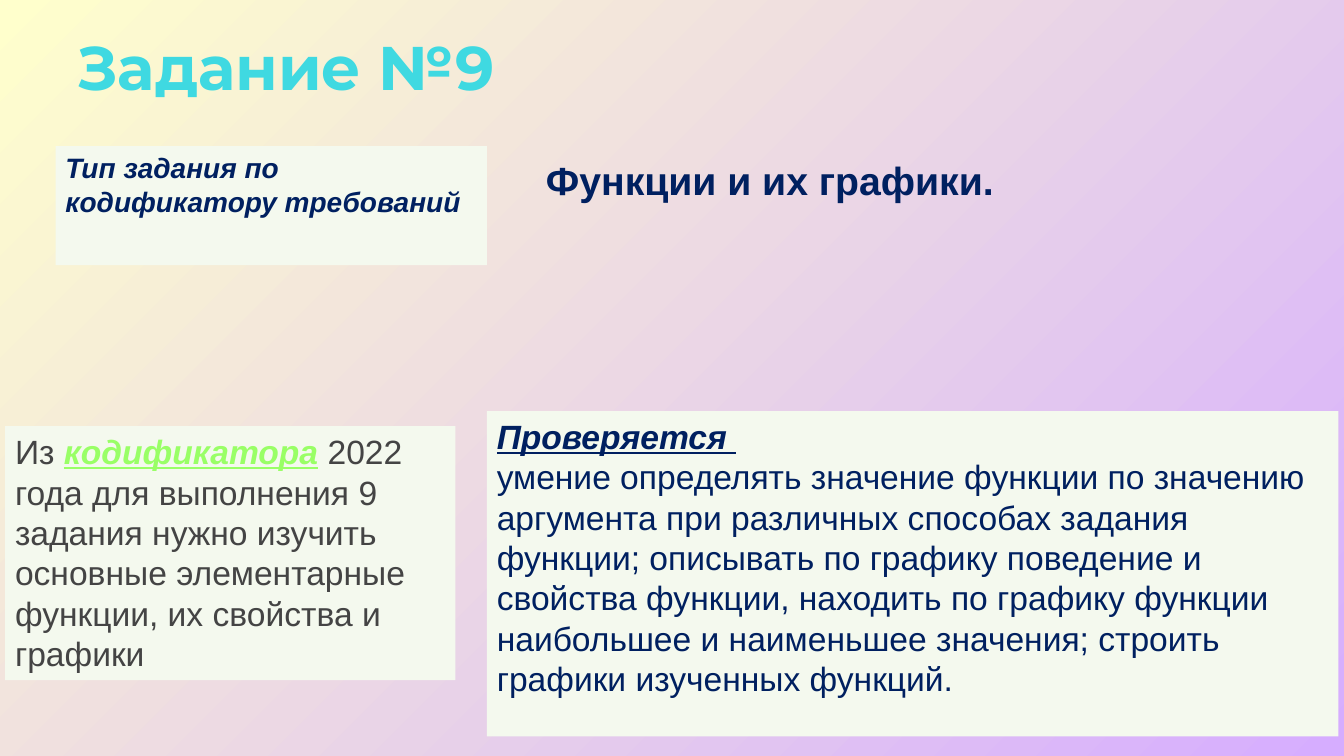
from pptx import Presentation
from pptx.dml.color import RGBColor
from pptx.enum.shapes import MSO_SHAPE
from pptx.enum.text import MSO_ANCHOR, PP_ALIGN
from pptx.util import Cm, Pt

RECTANGLE = MSO_SHAPE.RECTANGLE
TOP, MIDDLE = MSO_ANCHOR.TOP, MSO_ANCHOR.MIDDLE
LEFT = PP_ALIGN.LEFT

CREAM = RGBColor(0xFF, 0xFF, 0xCC)
LILAC = RGBColor(0xD6, 0xAD, 0xFF)
TURQUOISE = RGBColor(0x3F, 0xD9, 0xE1)
PALE_GREEN = RGBColor(0xF4, 0xF9, 0xEE)
LIME = RGBColor(0x99, 0xFF, 0x66)
NAVY = RGBColor(0x00, 0x20, 0x60)
GREY = RGBColor(0x44, 0x44, 0x44)


class TaskSlide:
    BODY_FONT = "Arial"
    TITLE_FONT = "Montserrat"

    def __init__(self, deck):
        self.slide = deck.slides.add_slide(deck.slide_layouts[5])

    def background(self, start, end):
        """Shade the slide diagonally from the top left to the bottom right."""
        fill = self.slide.background.fill
        fill.gradient()
        fill.gradient_angle = 315
        for stop, color, position in zip(fill.gradient_stops, (start, end), (0, 1)):
            stop.color.rgb = color
            stop.position = position

    def add_text(self, frame, paragraphs, size, font=BODY_FONT, anchor=TOP):
        """Fill a frame with paragraphs, each a list of (text, colour, styles)."""
        frame.word_wrap = True
        frame.vertical_anchor = anchor
        for index, runs in enumerate(paragraphs):
            paragraph = frame.add_paragraph() if index else frame.paragraphs[0]
            paragraph.alignment = LEFT
            for text, color, styles in runs:
                run = paragraph.add_run()
                run.text = text
                run.font.name = font
                run.font.size = Pt(size)
                run.font.color.rgb = color
                run.font.bold = "b" in styles
                run.font.italic = "i" in styles
                run.font.underline = "u" in styles

    def title(self, text, left, top, width, height):
        heading = self.slide.shapes.title
        heading.left, heading.top = Cm(left), Cm(top)
        heading.width, heading.height = Cm(width), Cm(height)
        self.add_text(heading.text_frame, [[(text, TURQUOISE, "b")]], 44,
                      self.TITLE_FONT, MIDDLE)

    def panel(self, paragraphs, size, left, top, width, height):
        panel = self.slide.shapes.add_shape(
            RECTANGLE, Cm(left), Cm(top), Cm(width), Cm(height))
        panel.shadow.inherit = False
        panel.fill.solid()
        panel.fill.fore_color.rgb = PALE_GREEN
        panel.line.fill.background()
        self.add_text(panel.text_frame, paragraphs, size)

    def text(self, paragraphs, size, left, top, width, height):
        box = self.slide.shapes.add_textbox(
            Cm(left), Cm(top), Cm(width), Cm(height))
        self.add_text(box.text_frame, paragraphs, size)


def main():
    deck = Presentation()
    deck.slide_width, deck.slide_height = Cm(33.87), Cm(19.05)
    task = TaskSlide(deck)
    task.background(CREAM, LILAC)
    task.title("Задание №9", 1.7, 0.69, 31.06, 1.93)

    skills = [
        [("Проверяется ", NAVY, "biu")],
        [("умение определять значение функции по значению аргумента при "
          "различных способах задания функции; описывать по графику поведение "
          "и свойства функции, находить по графику функции наибольшее и "
          "наименьшее значения; строить графики изученных функций.", NAVY, "")],
    ]
    task.panel(skills, 24, 12.27, 10.36, 21.46, 8.2)

    task_type = [[("Тип задания по кодификатору требований", NAVY, "bi")]]
    task.panel(task_type, 20, 1.4, 3.68, 10.87, 3)

    topics = [[
        ("Из ", GREY, ""),
        ("кодификатора", LIME, "biu"),
        (" 2022 года для выполнения 9 задания нужно изучить основные "
         "элементарные функции, их свойства и графики", GREY, ""),
    ]]
    task.panel(topics, 24, 0.13, 10.74, 11.35, 6.4)

    task.text([[("Функции и их графики.", NAVY, "b")]], 28, 13.51, 3.81, 17.55, 1.45)
    deck.save("out.pptx")


if __name__ == "__main__":
    main()
